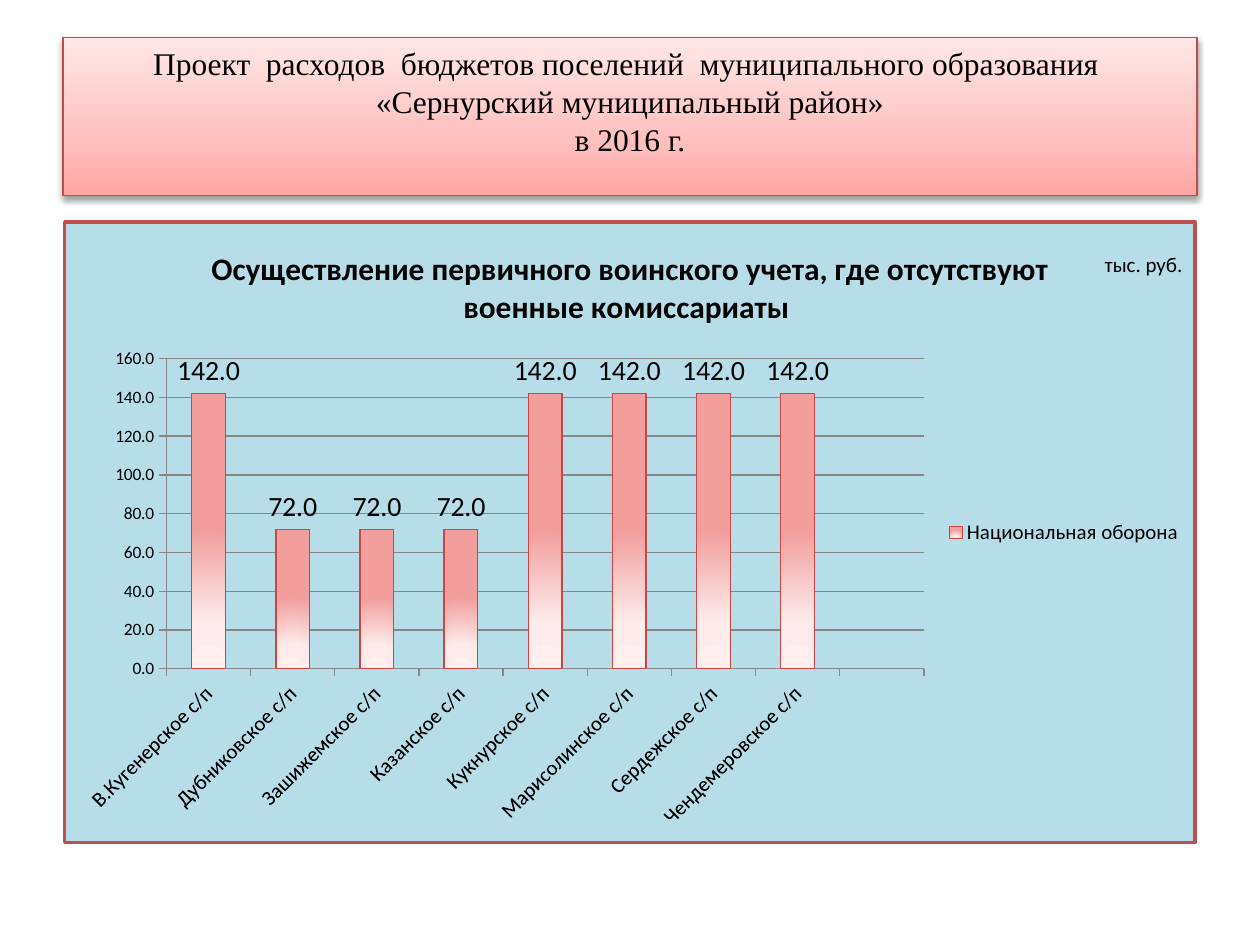
from lxml import etree
from pptx import Presentation
from pptx.chart.data import CategoryChartData
from pptx.dml.color import RGBColor
from pptx.enum.chart import XL_CHART_TYPE as ChartType, XL_LABEL_POSITION as LabelPos
from pptx.enum.chart import XL_LEGEND_POSITION as LegendPos, XL_TICK_MARK as Tick
from pptx.enum.text import MSO_ANCHOR, PP_ALIGN
from pptx.oxml import parse_xml
from pptx.oxml.ns import nsdecls, qn
from pptx.util import Pt

COLORS = {
    "text": "000000", "panel": "B7DEE8", "border": "C0504D", "grid": "868686",
    "title_line": "BF4C48", "bar_line": "CC4542",
}
TITLE_STOPS = [(0, "FFA6A5"), (35, "FFC0BF"), (100, "FFE7E7")]
BAR_STOPS = [(0, "FFEFEF"), (34, "FDEBEB"), (100, "F19E9D")]
TITLE_LINES = [
    "Проект  расходов  бюджетов поселений  муниципального образования ",
    "«Сернурский муниципальный район»",
    "в 2016 г.",
]
SETTLEMENTS = [
    "В.Кугенерское с/п", "Дубниковское с/п", "Зашижемское с/п", "Казанское с/п",
    "Кукнурское с/п", "Марисолинское с/п", "Сердежское с/п", "Чендемеровское с/п",
]
SPENDING = [142, 72, 72, 72, 142, 142, 142, 142, None]


def rgb(name):
    return RGBColor.from_string(COLORS[name])


def set_font(font, size, name="Calibri", bold=False):
    font.size, font.name, font.bold = Pt(size), name, bold
    font.color.rgb = rgb("text")


def set_line(line, color, width):
    line.color.rgb = rgb(color)
    line.width = Pt(width)


def set_gradient(fill, sp_pr, stops, direction):
    fill.gradient()
    grad = sp_pr.find(qn("a:gradFill"))
    for child in list(grad):
        grad.remove(child)
    gs_list = etree.SubElement(grad, qn("a:gsLst"))
    for pos, color in stops:
        gs = etree.SubElement(gs_list, qn("a:gs"), pos=str(pos * 1000))
        etree.SubElement(gs, qn("a:srgbClr"), val=color)
    grad.append(parse_xml(direction))


def add_title(slide, left, top, width, height):
    sp = slide.shapes.title
    sp.left, sp.top, sp.width, sp.height = left, top, width, height
    sp_pr = sp._element.spPr
    set_gradient(sp.fill, sp_pr, TITLE_STOPS,
                 f'<a:lin {nsdecls("a")} ang="16200000" scaled="0"/>')
    set_line(sp.line, "title_line", 0.75)
    sp_pr.append(parse_xml(
        f'<a:effectLst {nsdecls("a")}><a:outerShdw blurRad="{Pt(3.1)}" dist="{Pt(1.6)}" '
        'dir="5400000" rotWithShape="0"><a:srgbClr val="000000"><a:alpha val="38000"/>'
        '</a:srgbClr></a:outerShdw></a:effectLst>'))
    tf = sp.text_frame
    tf.word_wrap = True
    tf.vertical_anchor = MSO_ANCHOR.TOP
    tf.text = "\v".join(TITLE_LINES)
    p = tf.paragraphs[0]
    p.alignment = PP_ALIGN.CENTER
    set_font(p.font, 18, "Times New Roman")


def style_axes(chart):
    for axis, size in ((chart.category_axis, 12), (chart.value_axis, 10)):
        axis.major_tick_mark = Tick.OUTSIDE
        set_font(axis.tick_labels.font, size)
        set_line(axis.format.line, "grid", 0.75)
    chart.category_axis._element.find(qn("c:txPr")).find(qn("a:bodyPr")).set("rot", "-2700000")
    values = chart.value_axis
    set_line(values.major_gridlines.format.line, "grid", 0.75)
    values.tick_labels.number_format = "0.0"
    values.tick_labels.number_format_is_linked = False


def style_bars(plot):
    plot.gap_width = 150
    plot.vary_by_categories = False
    series = plot.series[0]
    fmt = series.format
    set_gradient(fmt.fill, series._element.spPr, BAR_STOPS,
                 f'<a:path {nsdecls("a")} path="circle"><a:fillToRect l="50000" '
                 't="155000" r="50000" b="-55000"/></a:path>')
    set_line(fmt.line, "bar_line", 0.75)
    labels = series.data_labels
    labels.show_value = True
    labels.position = LabelPos.OUTSIDE_END
    labels.number_format = "0.0"
    labels.number_format_is_linked = False
    set_font(labels.font, 16)


def style_panel(chart):
    space = chart._chartSpace
    space.find(qn("c:date1904")).addnext(
        parse_xml(f'<c:roundedCorners {nsdecls("c")} val="0"/>'))
    space.find(qn("c:chart")).addnext(parse_xml(
        f'<c:spPr {nsdecls("c", "a")}><a:solidFill><a:srgbClr val="{COLORS["panel"]}"/>'
        f'</a:solidFill><a:ln w="{Pt(2)}"><a:solidFill><a:srgbClr val="{COLORS["border"]}"/>'
        '</a:solidFill></a:ln></c:spPr>'))
    area = space.find(qn("c:chart")).find(qn("c:plotArea"))
    for old in area.findall(qn("c:layout")):
        area.remove(old)
    area.insert(0, parse_xml(
        f'<c:layout {nsdecls("c")}><c:manualLayout><c:layoutTarget val="inner"/>'
        '<c:xMode val="edge"/><c:yMode val="edge"/><c:x val="0.09"/><c:y val="0.22"/>'
        '<c:w val="0.67"/><c:h val="0.5"/></c:manualLayout></c:layout>'))


def add_spending_chart(slide, left, top, width, height):
    data = CategoryChartData(number_format="0.0")
    data.categories = SETTLEMENTS
    data.add_series("Национальная оборона", SPENDING)
    chart = slide.shapes.add_chart(
        ChartType.COLUMN_CLUSTERED, left, top, width, height, data).chart
    set_font(chart.font, 10)
    chart.has_title = True
    tf = chart.chart_title.text_frame
    tf.text = "Осуществление первичного воинского учета, где отсутствуют военные комиссариаты "
    set_font(tf.paragraphs[0].font, 18, bold=True)
    chart.chart_title.include_in_layout = False
    chart.has_legend = True
    chart.legend.position = LegendPos.RIGHT
    chart.legend.include_in_layout = False
    set_font(chart.legend.font, 12)
    style_axes(chart)
    style_bars(chart.plots[0])
    style_panel(chart)


def add_unit_note(slide, left, top, width, height):
    tf = slide.shapes.add_textbox(left, top, width, height).text_frame
    tf.word_wrap = True
    p = tf.paragraphs[0]
    p.text = "тыс. руб."
    set_font(p.font, 12)


def main():
    prs = Presentation()
    prs.slide_width, prs.slide_height = Pt(720), Pt(540)
    slide = prs.slides.add_slide(prs.slide_layouts[5])
    add_title(slide, Pt(36), Pt(21.6), Pt(648), Pt(90))
    add_spending_chart(slide, Pt(36), Pt(126), Pt(648), Pt(356.4))
    add_unit_note(slide, Pt(624.2), Pt(140.4), Pt(67.7), Pt(21.6))
    prs.save("out.pptx")


if __name__ == "__main__":
    main()
